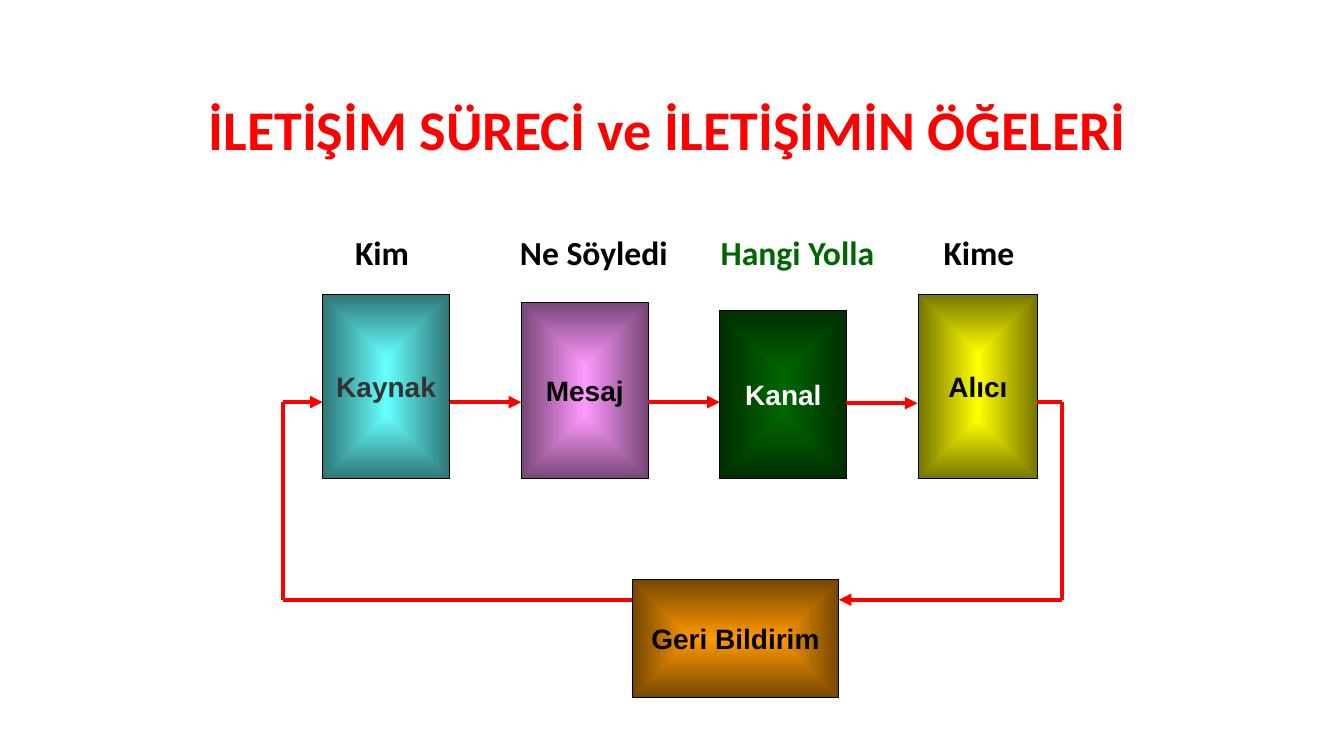
from dataclasses import dataclass

from pptx import Presentation
from pptx import util as u
from pptx.dml.color import RGBColor
from pptx.enum import shapes, text
from pptx.oxml import ns, xmlchemy

RED, BLACK, GREEN = "FF0000", "000000", "006600"
FLOW_Y, FEEDBACK_Y = 3.99, 5.95
LEFT_X, RIGHT_X = 2.81, 10.53


@dataclass
class Stage:
    name: str
    left: float
    top: float
    width: float
    height: float
    centre: str
    edge: str
    ink: str = BLACK


@dataclass
class Label:
    wording: str
    middle: float
    ink: str = BLACK


@dataclass
class Link:
    start: tuple[float, float]
    end: tuple[float, float]
    arrow: bool = False


STAGES = [
    Stage("Kaynak", 3.2, 2.92, 1.26, 1.83, "66FFFF", "2F7676", "333333"),
    Stage("Mesaj", 5.17, 3, 1.26, 1.75, "FF99FF", "764776"),
    Stage("Kanal", 7.14, 3.08, 1.26, 1.67, GREEN, "002F00", "FFFFFF"),
    Stage("Alıcı", 9.11, 2.92, 1.18, 1.83, "FFFF00", "767600"),
    Stage("Geri Bildirim", 6.27, 5.75, 2.05, 1.17, "FF9900", "764700"),
]
LABELS = [
    Label("Kim", 3.79),
    Label("Ne Söyledi", 5.89),
    Label("Hangi Yolla", 7.91, GREEN),
    Label("Kime", 9.71),
]
LINKS = [
    # Feedback back to the source
    Link((6.27, FEEDBACK_Y), (LEFT_X, FEEDBACK_Y)),
    Link((LEFT_X, FEEDBACK_Y), (LEFT_X, FLOW_Y)),
    Link((LEFT_X, FLOW_Y), (3.2, FLOW_Y), True),
    # Source to receiver
    Link((4.46, FLOW_Y), (5.17, FLOW_Y), True),
    Link((6.43, FLOW_Y), (7.14, FLOW_Y), True),
    Link((8.39, 4), (9.1, 4), True),
    # Receiver to feedback
    Link((10.29, FLOW_Y), (RIGHT_X, FLOW_Y)),
    Link((RIGHT_X, FLOW_Y), (RIGHT_X, FEEDBACK_Y)),
    Link((RIGHT_X, FEEDBACK_Y), (8.32, FEEDBACK_Y), True),
]


def colour(code: str) -> RGBColor:
    return RGBColor.from_string(code)


def write(box, wording: str, font: str, size: float, ink: str,
          align=text.PP_ALIGN.CENTER) -> None:
    frame = box.text_frame
    frame.word_wrap = False
    frame.vertical_anchor = text.MSO_ANCHOR.MIDDLE
    para = frame.paragraphs[0]
    para.alignment = align
    span = para.add_run()
    span.text = wording
    span.font.name = font
    span.font.size = u.Pt(size)
    span.font.bold = True
    span.font.color.rgb = colour(ink)


def add_text(page, left: float, top: float, width: float, height: float):
    return page.shapes.add_textbox(*map(u.Inches, (left, top, width, height)))


def add_stage(page, stage: Stage) -> None:
    bounds = (stage.left, stage.top, stage.width, stage.height)
    box = page.shapes.add_shape(shapes.MSO_SHAPE.RECTANGLE, *map(u.Inches, bounds))
    box.shadow.inherit = False
    box.line.color.rgb = colour(BLACK)
    box.line.width = u.Pt(0.75)
    box.fill.gradient()
    for stop, code, position in zip(box.fill.gradient_stops,
                                    (stage.centre, stage.edge), (0, 1)):
        stop.color.rgb = colour(code)
        stop.position = position
    # Turn the linear gradient into one that spreads from the centre
    linear = box.element.spPr.find(".//" + ns.qn("a:lin"))
    spread = xmlchemy.OxmlElement("a:path")
    spread.set("path", "shape")
    centre = xmlchemy.OxmlElement("a:fillToRect")
    for side in "ltrb":
        centre.set(side, "50000")
    spread.append(centre)
    linear.getparent().replace(linear, spread)
    write(box, stage.name, "Arial", 20, stage.ink)


def add_link(page, link: Link) -> None:
    line = page.shapes.add_connector(
        shapes.MSO_CONNECTOR.STRAIGHT, *map(u.Inches, link.start + link.end))
    line.line.color.rgb = colour(RED)
    line.line.width = u.Pt(3)
    if link.arrow:
        head = xmlchemy.OxmlElement("a:tailEnd")
        head.set("type", "triangle")
        line.line._get_or_add_ln().append(head)
    line.element.spPr.append(xmlchemy.OxmlElement("a:effectLst"))


def main() -> None:
    deck = Presentation()
    deck.slide_width, deck.slide_height = u.Inches(13.33), u.Inches(7.5)
    page = deck.slides.add_slide(deck.slide_layouts[6])

    # Questions above the stages
    for label in LABELS:
        box = add_text(page, label.middle - 0.9, 2.25, 1.8, 0.5)
        write(box, label.wording, "Calibri", 24, label.ink)

    # Stages and the links between them
    for stage in STAGES:
        add_stage(page, stage)
    for link in LINKS:
        add_link(page, link)

    # Title
    title = add_text(page, 1.97, 0.89, 9.39, 0.77)
    write(title, "İLETİŞİM SÜRECİ ve İLETİŞİMİN ÖĞELERİ", "Calibri", 40, RED,
          text.PP_ALIGN.LEFT)

    deck.save("out.pptx")


if __name__ == "__main__":
    main()
